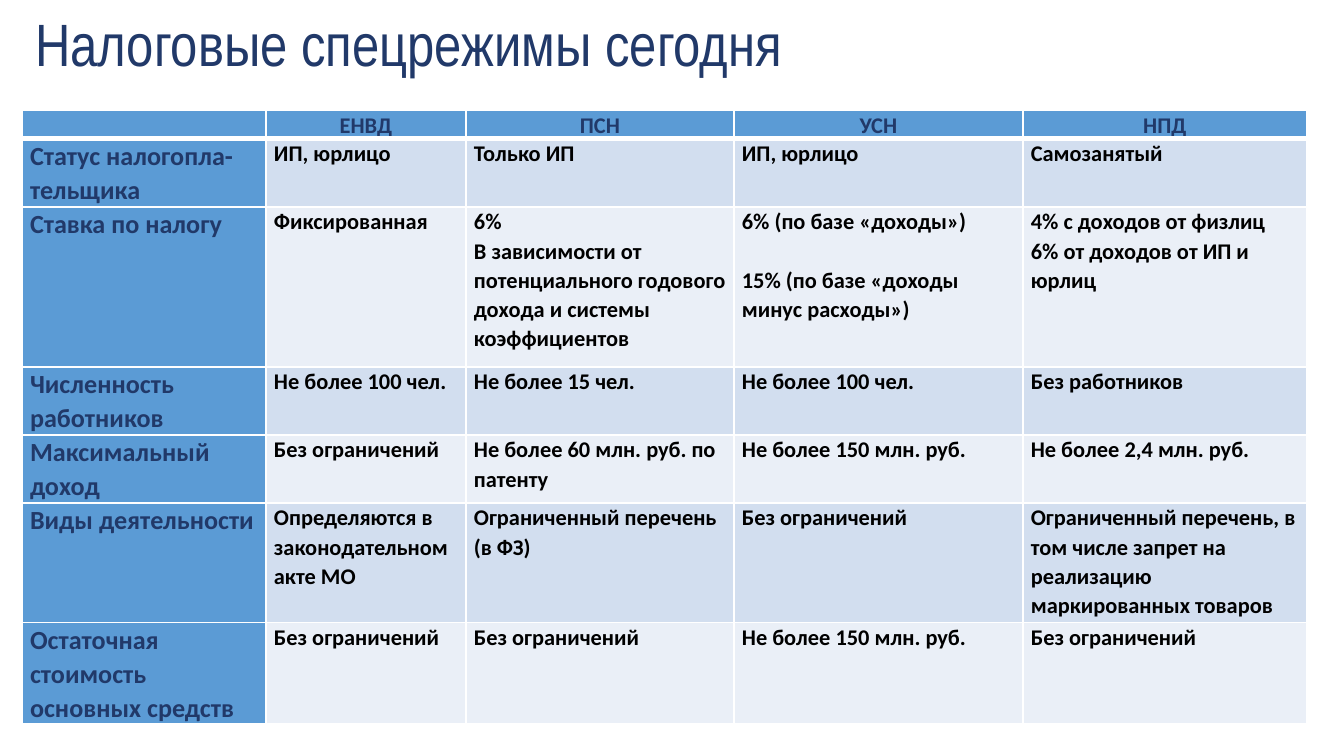
from lxml.etree import SubElement
from pptx import Presentation
from pptx.dml.color import RGBColor
from pptx.enum.text import MSO_ANCHOR, PP_ALIGN
from pptx.oxml.ns import qn
from pptx.util import Pt

SCALE = 914400 / 134.4  # EMU in one px

NAVY = RGBColor(0x21, 0x39, 0x69)
BLUE = RGBColor(0x5B, 0x9B, 0xD5)
BAND_DARK = RGBColor(0xD2, 0xDE, 0xEF)
BAND_LIGHT = RGBColor(0xEA, 0xEF, 0xF7)
WHITE = RGBColor(0xFF, 0xFF, 0xFF)
BLACK = RGBColor(0, 0, 0)

COLUMN_WIDTHS = [244, 200, 268, 289, 284]
ROW_HEIGHTS = [28, 68, 160, 68, 68, 120, 101]
SPACED_PARAGRAPH = "15% (по базе «доходы минус расходы»)"

REGIMES = [
    ["", "ЕНВД", "ПСН", "УСН", "НПД"],
    ["Статус налогопла-тельщика", "ИП, юрлицо", "Только ИП", "ИП, юрлицо", "Самозанятый"],
    ["Ставка по налогу", "Фиксированная",
     "6%\nВ зависимости от потенциального годового дохода и системы коэффициентов",
     "6% (по базе «доходы»)\n" + SPACED_PARAGRAPH,
     "4% с доходов от физлиц\n6% от доходов от ИП и юрлиц"],
    ["Численность работников", "Не более 100 чел.", "Не более 15 чел.",
     "Не более 100 чел.", "Без работников"],
    ["Максимальный доход", "Без ограничений", "Не более 60 млн. руб. по патенту",
     "Не более 150 млн. руб.", "Не более 2,4 млн. руб."],
    ["Виды деятельности", "Определяются в законодательном акте МО",
     "Ограниченный перечень (в ФЗ)", "Без ограничений",
     "Ограниченный перечень, в том числе запрет на реализацию маркированных товаров"],
    ["Остаточная стоимость основных средств", "Без ограничений", "Без ограничений",
     "Не более 150 млн. руб.", "Без ограничений"],
]


def px(length):
    return round(length * SCALE)


def format_font(font, name, size, color, bold):
    font.name, font.size, font.bold = name, Pt(size), bold
    font.color.rgb = color


def add_title(slide, left, top, width, height):
    title = slide.shapes.add_textbox(px(left), px(top), px(width), px(height))
    frame = title.text_frame
    frame.word_wrap = True
    frame.vertical_anchor = MSO_ANCHOR.MIDDLE
    frame.text = "Налоговые спецрежимы сегодня"
    format_font(frame.paragraphs[0].runs[0].font, "Arial Narrow", 32, NAVY, False)


def set_borders(cell, bottom_width):
    properties = cell._tc.get_or_add_tcPr()
    for side, width in (("L", 1), ("R", 1), ("T", 1), ("B", bottom_width)):
        line = SubElement(properties, qn(f"a:ln{side}"), w=str(Pt(width)))
        fill = SubElement(line, qn("a:solidFill"))
        SubElement(fill, qn("a:srgbClr"), val=str(WHITE))


def fill_cell(cell, text, row, column):
    is_header, is_label = row == 0, column == 0
    set_borders(cell, 3 if is_header else 1)
    cell.fill.solid()
    band = BAND_DARK if row % 2 else BAND_LIGHT
    cell.fill.fore_color.rgb = BLUE if is_header or is_label else band
    cell.margin_left = cell.margin_right = px(8)
    cell.margin_top = cell.margin_bottom = 0

    cell.text_frame.text = text
    size = 14 if is_label and not is_header else 12
    color = NAVY if is_header or is_label else BLACK
    for paragraph in cell.text_frame.paragraphs:
        paragraph.line_spacing = 1.07
        if is_header:
            paragraph.alignment = PP_ALIGN.CENTER
        if paragraph.text == SPACED_PARAGRAPH:
            paragraph.space_before = Pt(15.7)
        if not paragraph.runs:
            paragraph.font.size = Pt(size)
        for run in paragraph.runs:
            format_font(run.font, "Calibri", size, color, True)


def add_regime_table(slide, left, top):
    regimes = slide.shapes.add_table(
        len(ROW_HEIGHTS), len(COLUMN_WIDTHS), px(left), px(top),
        px(sum(COLUMN_WIDTHS)), px(sum(ROW_HEIGHTS))).table
    for column, width in zip(regimes.columns, COLUMN_WIDTHS):
        column.width = px(width)
    for row, height in zip(regimes.rows, ROW_HEIGHTS):
        row.height = px(height)
    for r, texts in enumerate(REGIMES):
        for c, text in enumerate(texts):
            fill_cell(regimes.cell(r, c), text, r, c)


def main():
    presentation = Presentation()
    presentation.slide_width, presentation.slide_height = px(1344), px(756)
    slide = presentation.slides.add_slide(presentation.slide_layouts[6])
    add_title(slide, 22, 0, 1270, 86)
    add_regime_table(slide, 22, 110)
    presentation.save("out.pptx")


if __name__ == "__main__":
    main()
